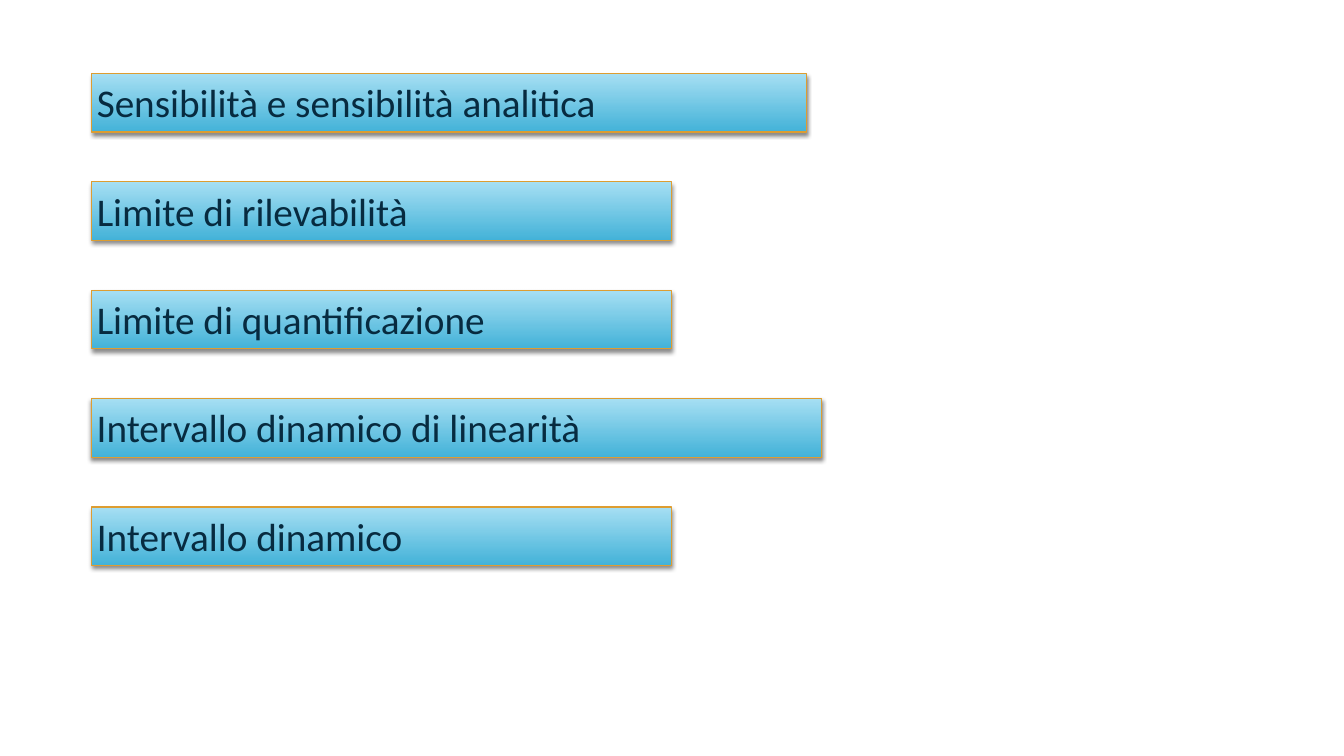
"""Slide listing the analytical performance parameters as gradient bars."""
from lxml import etree
from pptx import Presentation
from pptx import util as u
from pptx.dml.color import RGBColor
from pptx.enum import shapes, text
from pptx.oxml.ns import qn

COLORS = {"top": "A6DFF3", "bottom": "43B2D8", "border": "DD9D31",
          "text": "072B40", "shadow": "000000"}
LEFT, FIRST_TOP, LAST_TOP, HEIGHT = 0.91, 0.73, 5.03, 0.58
BARS = [
    ("Sensibilità e sensibilità analitica", 7.09),
    ("Limite di rilevabilità", 5.75),
    ("Limite di quantificazione", 5.75),
    ("Intervallo dinamico di linearità", 7.24),
    ("Intervallo dinamico", 5.75),
]


def rgb(name):
    """Return the named palette colour."""
    return RGBColor.from_string(COLORS[name])


def add_shadow(sp):
    """Give a shape a soft shadow falling straight down."""
    sp.shadow.inherit = False
    effects = sp._element.spPr.find(qn("a:effectLst"))
    shadow = etree.SubElement(
        effects, qn("a:outerShdw"), blurRad=str(u.Pt(3)), dist=str(u.Pt(2)),
        dir=str(90 * 60000), algn="ctr", rotWithShape="0")
    color = etree.SubElement(shadow, qn("a:srgbClr"), val=COLORS["shadow"])
    etree.SubElement(color, qn("a:alpha"), val="45000")


def style_bar(sp):
    """Apply the gradient, border and shadow of a bar."""
    sp.fill.gradient()
    sp.fill.gradient_angle = 270
    for stop, name, position in zip(sp.fill.gradient_stops, ("top", "bottom"), (0, 1)):
        stop.color.rgb = rgb(name)
        stop.position = position
    sp.line.color.rgb = rgb("border")
    sp.line.width = u.Pt(0.75)
    add_shadow(sp)


def add_bar(slide, label, top, width):
    """Add one labelled bar."""
    sp = slide.shapes.add_shape(shapes.MSO_SHAPE.RECTANGLE, u.Inches(LEFT),
                                u.Inches(top), u.Inches(width), u.Inches(HEIGHT))
    style_bar(sp)
    tf = sp.text_frame
    tf.word_wrap = True
    tf.auto_size = text.MSO_AUTO_SIZE.SHAPE_TO_FIT_TEXT
    tf.vertical_anchor = text.MSO_ANCHOR.TOP
    tf.margin_left = tf.margin_right = tf.margin_top = tf.margin_bottom = u.Inches(0.05)
    p = tf.paragraphs[0]
    p.text = label
    p.alignment = text.PP_ALIGN.LEFT
    p.font.name = "Calibri"
    p.font.size = u.Pt(28)
    p.font.color.rgb = rgb("text")


def main():
    """Build and save the slide."""
    prs = Presentation()
    prs.slide_width, prs.slide_height = u.Inches(13.33), u.Inches(7.5)
    slide = prs.slides.add_slide(prs.slide_layouts[6])
    pitch = (LAST_TOP - FIRST_TOP) / (len(BARS) - 1)
    for row, (label, width) in enumerate(BARS):
        add_bar(slide, label, FIRST_TOP + row * pitch, width)
    prs.save("out.pptx")


if __name__ == "__main__":
    main()
